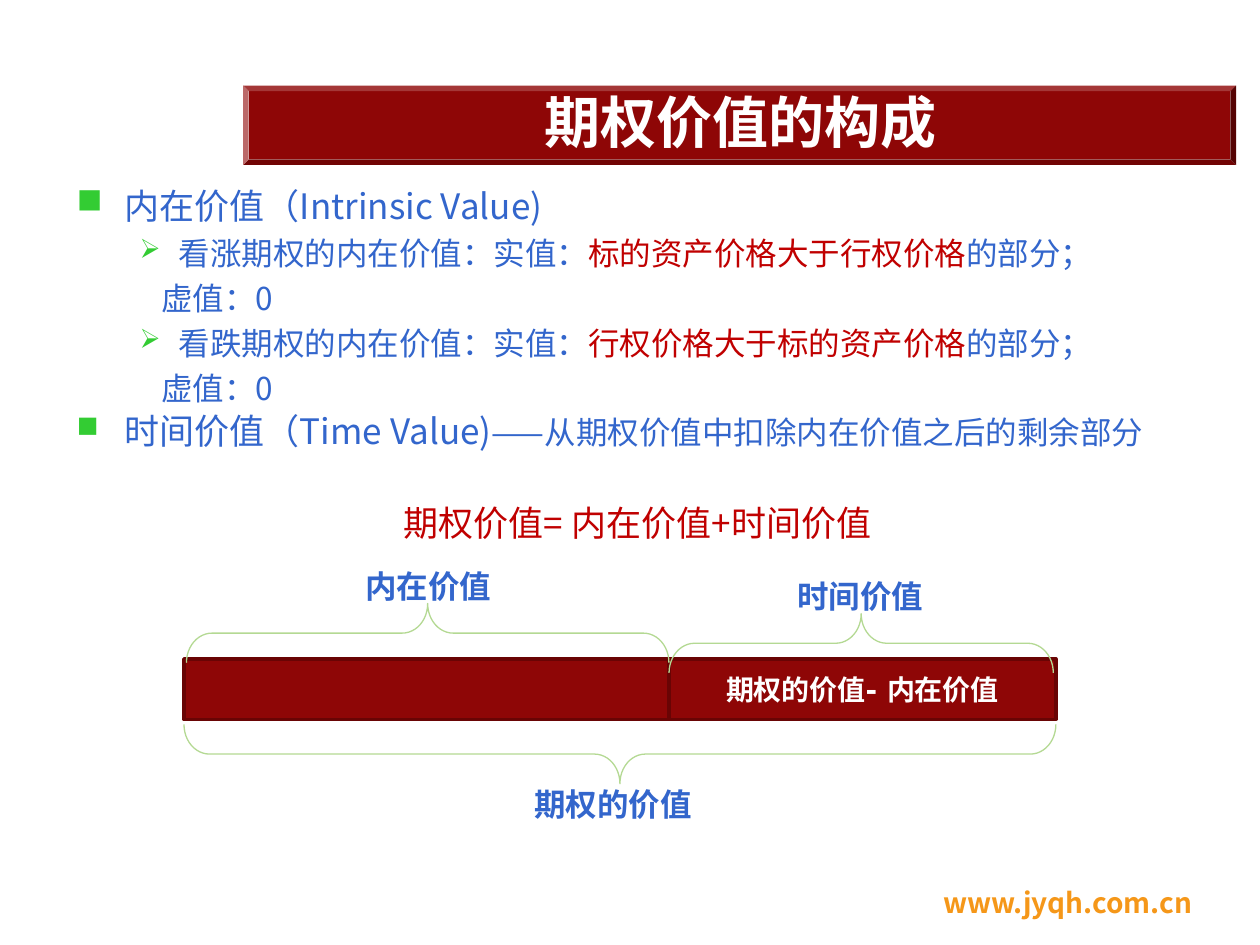
from lxml import etree
from pptx import Presentation
from pptx.dml.color import RGBColor
from pptx.enum.shapes import MSO_SHAPE
from pptx.enum.text import MSO_ANCHOR, PP_ALIGN
from pptx.oxml.ns import qn
from pptx.util import Inches, Pt

DARK_RED = RGBColor(0x8E, 0x06, 0x06)
EDGE_RED = RGBColor(0x69, 0x04, 0x04)
TEXT_RED = RGBColor(0xC0, 0x00, 0x00)
BLUE = RGBColor(0x33, 0x66, 0xCC)
WHITE = RGBColor(0xFF, 0xFF, 0xFF)
ORANGE = RGBColor(0xF5, 0x97, 0x19)
BRACE_GREEN = RGBColor(0xB4, 0xD9, 0x93)
BULLET_GREEN = RGBColor(0x33, 0xCC, 0x33)
CJK_FONT = "Noto Sans CJK SC"
LATIN_FONT = "DejaVu Sans"
LEFT, CENTER, RIGHT = PP_ALIGN.LEFT, PP_ALIGN.CENTER, PP_ALIGN.RIGHT
TOP, MIDDLE = MSO_ANCHOR.TOP, MSO_ANCHOR.MIDDLE
BEVEL, RECTANGLE, BRACE = MSO_SHAPE.BEVEL, MSO_SHAPE.RECTANGLE, MSO_SHAPE.RIGHT_BRACE


def add_run(paragraph, text, size, color, bold=False, font_name=CJK_FONT):
    run = paragraph.add_run()
    run.text = text
    formats = {"size": Pt(size), "bold": bold, "name": font_name}
    for name, value in formats.items():
        setattr(run.font, name, value)
    run.font.color.rgb = color
    east_asian = etree.SubElement(run.font._element, qn("a:ea"))
    east_asian.set("typeface", CJK_FONT)


def add_label(slide, box, text, size, color, align=LEFT, anchor=TOP, wrap=False):
    label = slide.shapes.add_textbox(*map(Inches, box))
    label.text_frame.word_wrap = wrap
    label.text_frame.vertical_anchor = anchor
    paragraph = label.text_frame.paragraphs[0]
    paragraph.alignment = align
    add_run(paragraph, text, size, color, bold=True)


def add_block(slide, kind, box, line_color=None):
    block = slide.shapes.add_shape(kind, *map(Inches, box))
    block.shadow.inherit = False
    block.fill.solid()
    block.fill.fore_color.rgb = DARK_RED
    if line_color is None:
        block.line.fill.background()
    else:
        block.line.color.rgb = line_color
        block.line.width = Pt(2)
    return block


def add_brace(slide, box, rotation):
    left, top, span, depth = box
    frame = (left + (span - depth) / 2, top + (depth - span) / 2, depth, span)
    brace = slide.shapes.add_shape(BRACE, *map(Inches, frame))
    brace.rotation = rotation
    brace.adjustments[0] = 0.43
    brace.adjustments[1] = 0.5
    brace.shadow.inherit = False
    brace.fill.background()
    brace.line.color.rgb = BRACE_GREEN
    brace.line.width = Pt(0.75)


def set_bullet(paragraph, margin, indent, char=None, percent=100):
    properties = paragraph._p.get_or_add_pPr()
    properties.set("marL", str(Inches(margin)))
    properties.set("indent", str(Inches(indent)))
    if char is None:
        etree.SubElement(properties, qn("a:buNone"))
        return
    color = etree.SubElement(properties, qn("a:buClr"))
    etree.SubElement(color, qn("a:srgbClr")).set("val", str(BULLET_GREEN))
    etree.SubElement(properties, qn("a:buSzPct")).set("val", str(percent * 1000))
    etree.SubElement(properties, qn("a:buChar")).set("char", char)


def add_title(slide, box):
    left, top, width, height = box
    banner = add_block(slide, BEVEL, box)
    banner.adjustments[0] = 0.07
    add_label(slide, (left + 0.15, top - 0.05, width - 0.28, height + 0.04),
              "期权价值的构成", 32, WHITE, CENTER, MIDDLE, wrap=True)


def add_definitions(slide, box):
    heading = (0.38, -0.38, "■")
    detail = (0.81, -0.31, "➢", 85)
    continuation = (0.67, 0)
    out_of_money = (continuation, [("虚值：0", 18, BLUE)])

    def option_line(option, condition):
        return detail, [(f"{option}期权的内在价值：实值：", 18, BLUE),
                        (condition, 18, TEXT_RED), ("的部分；", 18, BLUE)]

    lines = [
        (heading, [("内在价值（Intrinsic Value)", 20, BLUE)]),
        option_line("看涨", "标的资产价格大于行权价格"),
        out_of_money,
        option_line("看跌", "行权价格大于标的资产价格"),
        out_of_money,
        (heading + (85,), [("时间价值（Time Value)", 20, BLUE),
                           ("——从期权价值中扣除内在价值之后的剩余部分", 18, BLUE)]),
        ((0, 0), [("期权价值= 内在价值+时间价值", 20, TEXT_RED)]),
    ]
    frame = slide.shapes.add_textbox(*map(Inches, box)).text_frame
    frame.word_wrap = True
    for index, (bullet, runs) in enumerate(lines):
        paragraph = frame.add_paragraph() if index else frame.paragraphs[0]
        set_bullet(paragraph, *bullet)
        paragraph.line_spacing = Pt(25.7)
        for run in runs:
            add_run(paragraph, *run)
    paragraph.alignment = CENTER
    paragraph.space_before = Pt(27)


def add_value_diagram(slide, box):
    left, top, width, height = box
    bar_top, bar_height, depth = top + 0.78, 0.48, 0.47
    split = left + 3.85
    right = left + width
    add_block(slide, RECTANGLE, (left, bar_top, split - left, bar_height), EDGE_RED)
    time_bar = add_block(slide, RECTANGLE, (split, bar_top, right - split, bar_height), EDGE_RED)
    time_bar.text_frame.vertical_anchor = MIDDLE
    paragraph = time_bar.text_frame.paragraphs[0]
    paragraph.alignment = CENTER
    add_run(paragraph, "期权的价值- 内在价值", 16, WHITE, True, LATIN_FONT)

    add_brace(slide, (split, bar_top - 0.36, 3.05, depth), 270)
    add_brace(slide, (left + 0.02, bar_top - 0.44, 3.83, depth), 270)
    add_brace(slide, (left, bar_top + 0.52, width, depth), 90)
    add_label(slide, (left + 1.34, top, 1.21, 0.4), "内在价值", 18, BLUE)
    add_label(slide, (left + 4.77, top + 0.08, 1.21, 0.4), "时间价值", 18, BLUE)
    add_label(slide, (left + 2.68, top + height - 0.41, 1.49, 0.41), "期权的价值", 18, BLUE, wrap=True)


def main():
    presentation = Presentation()
    presentation.slide_width = Inches(10)
    presentation.slide_height = Inches(7.5)
    slide = presentation.slides.add_slide(presentation.slide_layouts[6])
    add_title(slide, (1.93, 0.68, 7.88, 0.63))
    add_definitions(slide, (0.51, 1.39, 9.1, 2.75))
    add_label(slide, (6.81, 6.98, 2.75, 0.39), "www.jyqh.com.cn", 16, ORANGE, RIGHT, wrap=True)
    add_value_diagram(slide, (1.46, 4.45, 6.92, 2.14))
    presentation.save("out.pptx")


if __name__ == "__main__":
    main()
